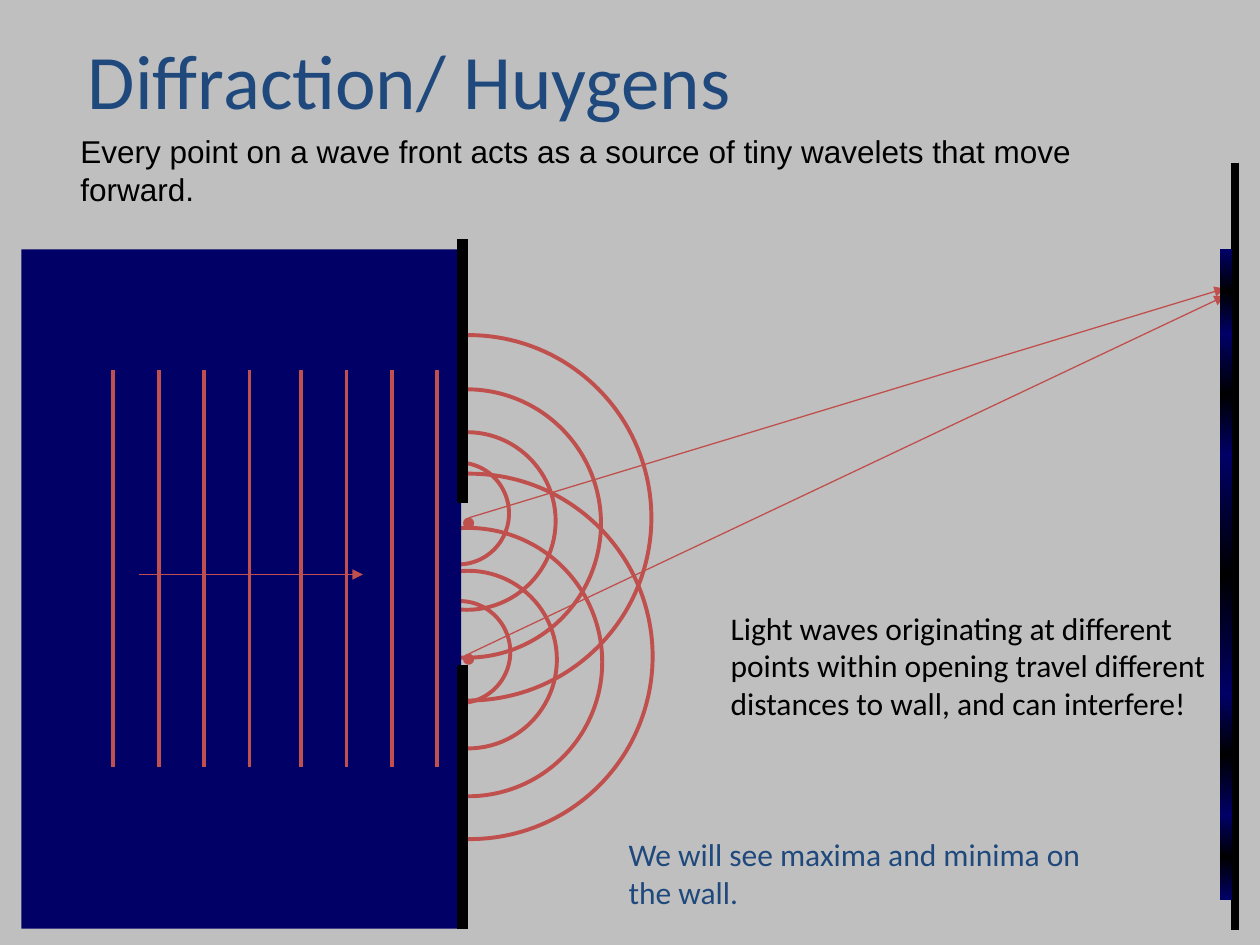
from copy import deepcopy

from pptx import Presentation
from pptx.dml.color import RGBColor
from pptx.enum.shapes import MSO_CONNECTOR, MSO_SHAPE
from pptx.enum.text import MSO_ANCHOR, MSO_AUTO_SIZE
from pptx.oxml.ns import qn
from pptx.util import Inches, Pt
from lxml import etree

STRAIGHT = MSO_CONNECTOR.STRAIGHT
RECT, OVAL = MSO_SHAPE.RECTANGLE, MSO_SHAPE.OVAL
TOP, MIDDLE = MSO_ANCHOR.TOP, MSO_ANCHOR.MIDDLE
GROW, FIXED = MSO_AUTO_SIZE.SHAPE_TO_FIT_TEXT, MSO_AUTO_SIZE.NONE
COLORS = {"bg": "BFBFBF", "wave": "C0504D", "navy": "000066",
          "black": "000000", "title": "1F497D"}


def rgb(name):
    """Return the named colour."""
    return RGBColor.from_string(COLORS[name])


def add_shape(slide, kind, x, y, w, h):
    """Add a preset shape without a shadow."""
    sp = slide.shapes.add_shape(kind, Inches(x), Inches(y), Inches(w), Inches(h))
    sp.shadow.inherit = False
    return sp


def add_line(slide, x1, y1, x2, y2, color, width, arrow=False):
    """Add a straight line, with an arrowhead at its end if asked."""
    ln = slide.shapes.add_connector(
        STRAIGHT, Inches(x1), Inches(y1), Inches(x2), Inches(y2))
    ln.line.color.rgb = rgb(color)
    ln.line.width = Pt(width)
    if arrow:
        etree.SubElement(ln.line._get_or_add_ln(), qn("a:tailEnd"), type="triangle")
    etree.SubElement(ln._element.spPr, qn("a:effectLst"))


def add_text(slide, x, y, w, h, text, color, size=18, font="Calibri",
             anchor=MIDDLE, wrap=True, fit=GROW):
    """Add a text box holding one paragraph."""
    tf = slide.shapes.add_textbox(
        Inches(x), Inches(y), Inches(w), Inches(h)).text_frame
    tf.word_wrap, tf.auto_size, tf.vertical_anchor = wrap, fit, anchor
    tf.text = text
    r = tf.paragraphs[0].runs[0]
    r.font.size, r.font.name = Pt(size), font
    r.font.color.rgb = rgb(color)


def add_wavelets(slide, x, y):
    """Draw four circular wavelets within a box of 2.9 inches."""
    for dx, dy, d in ((0.96, 1.01, 0.81), (0.73, 0.77, 1.41),
                      (0.37, 0.43, 2.13), (0, 0, 2.9)):
        sp = add_shape(slide, OVAL, x + dx, y + dy, d, d)
        sp.fill.background()
        sp.line.color.rgb = rgb("wave")
        sp.line.width = Pt(2.25)


def add_incoming_light(slide, x, y, w, h):
    """Draw the dark field, the barrier with its opening and the wave fronts."""
    sp = add_shape(slide, RECT, x, y, w, h)
    sp.fill.solid()
    sp.fill.fore_color.rgb = rgb("navy")
    sp.line.fill.background()
    edge, bottom, part = x + w + 0.01, y + h, 2.09
    for top in (bottom - part, y - 0.08):
        add_line(slide, edge, top, edge, top + part, "black", 6)
    for start in (0.73, 2.22):
        for i in range(4):
            front = x + start + i * 0.36
            add_line(slide, front, y + 0.96, front, y + 4.11, "wave", 2.25)
    add_line(slide, x + 0.93, y + 2.58, x + 2.71, y + 2.58, "wave", 0.75, True)


def add_sources(slide, x, tops, screen_x):
    """Mark the two point sources and draw their rays to the screen."""
    for top in tops:
        add_text(slide, x, top, 0.32, 0.5, "•", "wave", wrap=False)
    for top, end in zip(tops, (2.29, 2.35)):
        add_line(slide, x + 0.16, top + 0.23, screen_x, end, "wave", 0.75, True)


def add_fringes(slide, x, y, w, heights):
    """Stack the gradient bands of the interference pattern."""
    for h in heights:
        sp = add_shape(slide, RECT, x, y, w, h)
        sp.line.fill.background()
        sp.fill.gradient()
        sp.fill.gradient_angle = 90
        first = sp._element.spPr.find(".//" + qn("a:gs"))
        first.addnext(deepcopy(first))
        for stop, pos, color in zip(sp.fill.gradient_stops, (0, 0.5, 1),
                                    ("navy", "black", "navy")):
            stop.position = pos
            stop.color.rgb = rgb(color)
        y += h


def add_captions(slide):
    """Add the title and the three explanations."""
    add_text(slide, 0.6, 0, 8.5, 1.25, "Diffraction/ Huygens", "title", 44, fit=FIXED)
    add_text(slide, 0.54, 1, 8.69, 0.9,
             "Every point on a wave front acts as a source of tiny wavelets "
             "that move forward.", "black", font="Arial", anchor=TOP)
    add_text(slide, 4.89, 6.48, 4.12, 0.9,
             "We will see maxima and minima on the wall.", "title")
    add_text(slide, 5.7, 4.23, 4.02, 2.1,
             "Light waves originating at different points within opening travel "
             "different distances to wall, and can interfere!", "black")


def main():
    """Build and save the slide."""
    prs = Presentation()
    prs.slide_width, prs.slide_height = Inches(10), Inches(7.5)
    s = prs.slides.add_slide(prs.slide_layouts[6])
    s.background.fill.solid()
    s.background.fill.fore_color.rgb = rgb("bg")
    add_line(s, 9.8, 1.29, 9.8, 7.38, "black", 4.5)
    add_wavelets(s, 2.28, 3.76)
    add_wavelets(s, 2.27, 2.66)
    add_incoming_light(s, 0.17, 1.98, 3.49, 5.39)
    add_sources(s, 3.56, (3.88, 4.96), 9.72)
    add_captions(s)
    add_fringes(s, 9.68, 1.98, 0.1, (0.67, 0.96, 1.9, 0.96, 0.67))
    prs.save("out.pptx")


if __name__ == "__main__":
    main()
